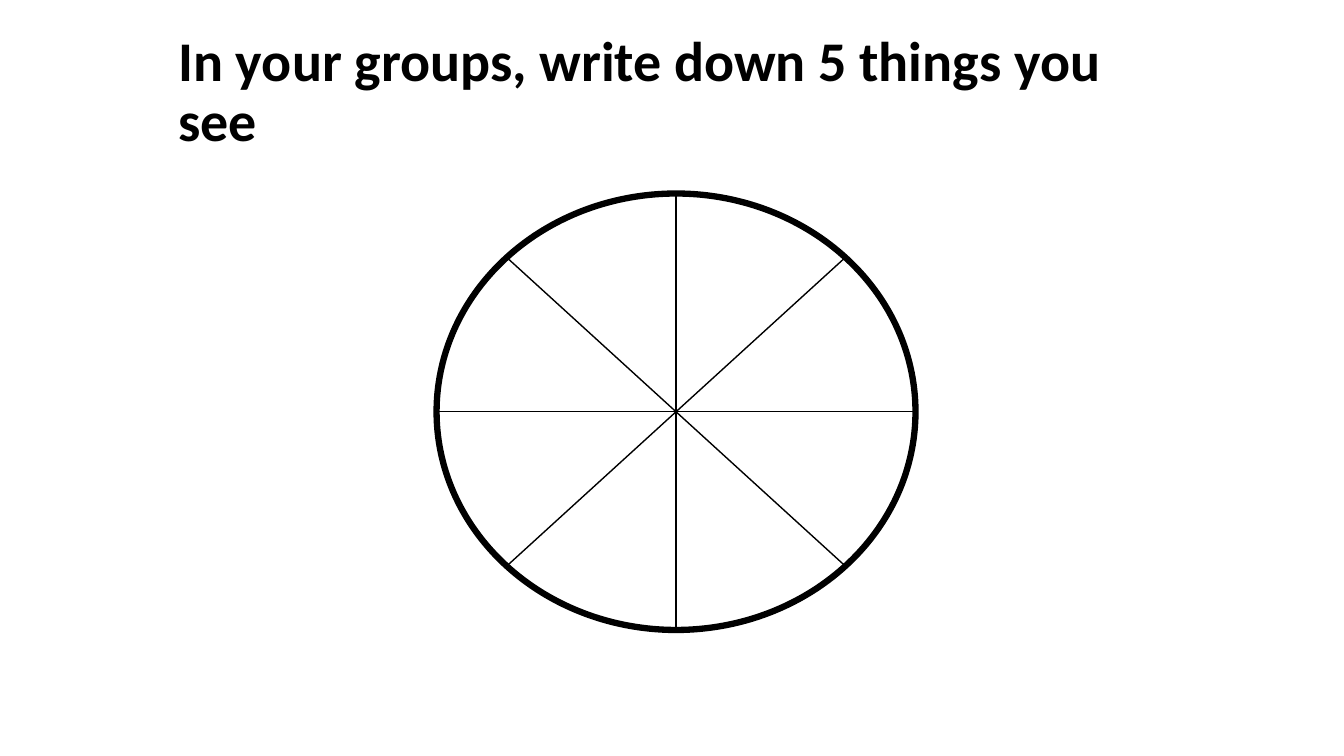
from math import cos, pi, sin

from lxml import etree
from pptx import Presentation
from pptx.dml.color import RGBColor
from pptx.enum.shapes import MSO_CONNECTOR, MSO_SHAPE
from pptx.enum.text import MSO_ANCHOR, PP_ALIGN
from pptx.oxml.ns import qn
from pptx.util import Inches, Pt

STRAIGHT = MSO_CONNECTOR.STRAIGHT
OVAL = MSO_SHAPE.OVAL
MIDDLE = MSO_ANCHOR.MIDDLE
LEFT = PP_ALIGN.LEFT

COLORS = {"ink": "000000", "paper": "FFFFFF"}
FONT = "Calibri"
TITLE_ONLY = 5


class SlideBuilder:
    """Draws styled elements on the current slide."""

    def __init__(self, slide):
        self.slide = slide

    def color(self, name):
        return RGBColor.from_string(COLORS[name])

    def outline(self, element, width):
        element.line.color.rgb = self.color("ink")
        element.line.width = Pt(width)

    def title(self, text, left, top, width, height):
        heading = self.slide.shapes.title
        heading.left, heading.top = Inches(left), Inches(top)
        heading.width, heading.height = Inches(width), Inches(height)
        frame = heading.text_frame
        frame.text = text
        frame.word_wrap = True
        frame.vertical_anchor = MIDDLE
        paragraph = frame.paragraphs[0]
        paragraph.alignment = LEFT
        paragraph.line_spacing = 0.9
        paragraph.font.name = FONT
        paragraph.font.size = Pt(40)
        paragraph.font.bold = True
        paragraph.font.color.rgb = self.color("ink")

    def ellipse(self, left, top, width, height):
        wheel = self.slide.shapes.add_shape(
            OVAL, Inches(left), Inches(top), Inches(width), Inches(height))
        wheel.shadow.inherit = False
        wheel.fill.solid()
        wheel.fill.fore_color.rgb = self.color("paper")
        self.outline(wheel, 4.5)

    def line(self, x1, y1, x2, y2):
        spoke = self.slide.shapes.add_connector(
            STRAIGHT, Inches(x1), Inches(y1), Inches(x2), Inches(y2))
        self.outline(spoke, 1)
        etree.SubElement(spoke._element.spPr, qn("a:effectLst"))


def main():
    prs = Presentation()
    prs.slide_width, prs.slide_height = Inches(13.33), Inches(7.5)
    builder = SlideBuilder(prs.slides.add_slide(prs.slide_layouts[TITLE_ONLY]))

    builder.title("In your groups, write down 5 things you see", 1.67, 0.3, 10, 1.25)

    left, top, width, height = 4.33, 1.92, 4.75, 4.33
    builder.ellipse(left, top, width, height)
    center_x, center_y = left + width / 2, top + height / 2
    for eighth in range(4):
        dx = width / 2 * cos(eighth * pi / 4)
        dy = height / 2 * sin(eighth * pi / 4)
        builder.line(center_x - dx, center_y - dy, center_x + dx, center_y + dy)

    prs.save("out.pptx")


if __name__ == "__main__":
    main()
